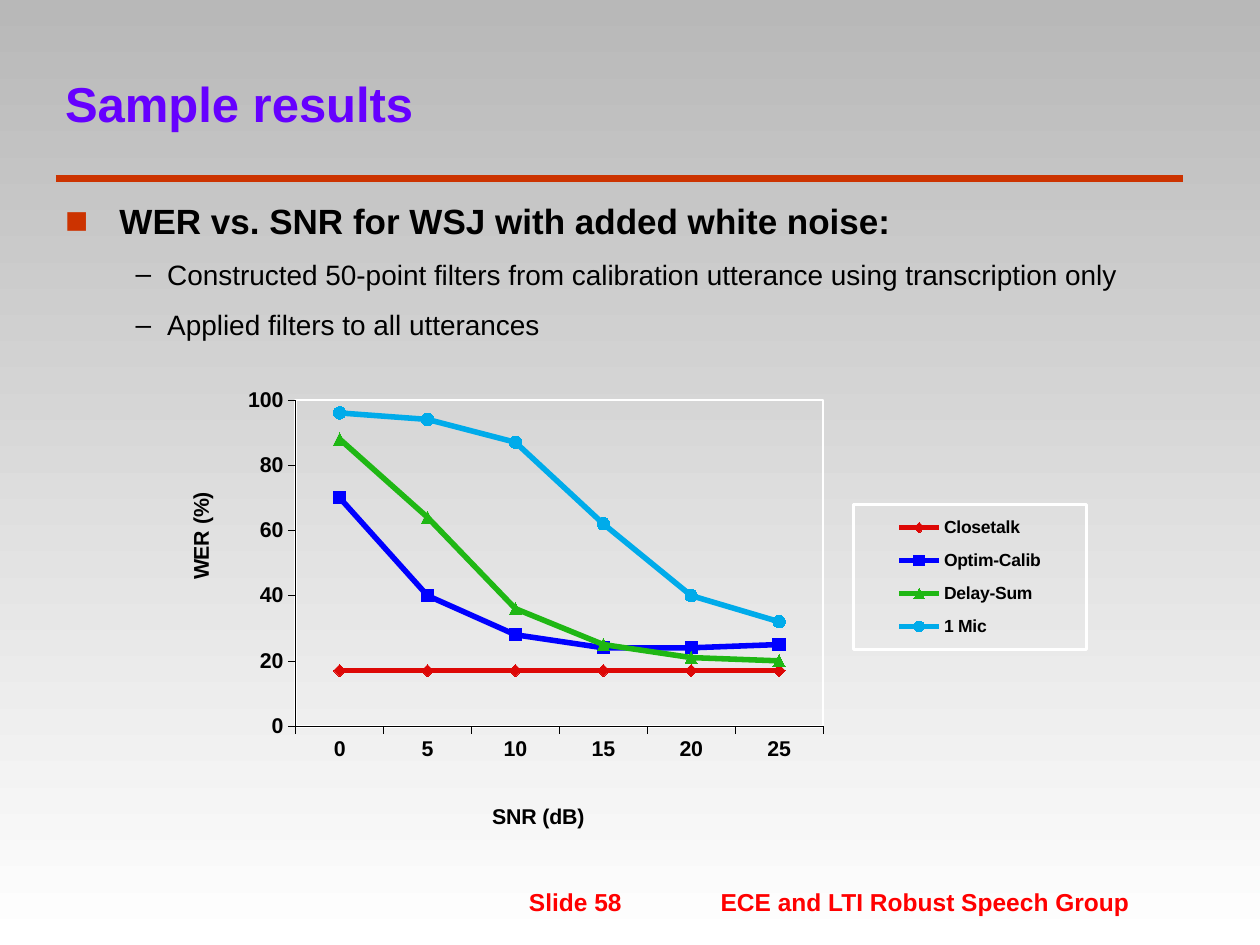
from lxml import etree
from pptx import Presentation
from pptx.chart.data import CategoryChartData
from pptx.dml.color import RGBColor
from pptx.enum.chart import XL_CHART_TYPE, XL_LEGEND_POSITION, XL_MARKER_STYLE, XL_TICK_MARK
from pptx.enum.shapes import MSO_CONNECTOR
from pptx.enum.text import MSO_ANCHOR
from pptx.oxml import parse_xml
from pptx.oxml.ns import nsdecls, qn
from pptx.util import Pt

LINE_MARKERS = XL_CHART_TYPE.LINE_MARKERS
RIGHT = XL_LEGEND_POSITION.RIGHT
OUTSIDE = XL_TICK_MARK.OUTSIDE
STRAIGHT = MSO_CONNECTOR.STRAIGHT
BOTTOM, MIDDLE = MSO_ANCHOR.BOTTOM, MSO_ANCHOR.MIDDLE

BLACK = RGBColor(0x00, 0x00, 0x00)
WHITE = RGBColor(0xFF, 0xFF, 0xFF)
GREY = RGBColor(0xB8, 0xB8, 0xB8)
RUST = RGBColor(0xCC, 0x33, 0x00)
PURPLE = RGBColor(0x66, 0x00, 0xFF)
RED = RGBColor(0xFF, 0x00, 0x00)

SNR_LEVELS = ["0", "5", "10", "15", "20", "25"]
SERIES = [  # name, WER values, colour, marker
    ("Closetalk", (17, 17, 17, 17, 17, 17), RGBColor(0xDD, 0x08, 0x06), XL_MARKER_STYLE.DIAMOND),
    ("Optim-Calib", (70, 40, 28, 24, 24, 25), RGBColor(0x00, 0x00, 0xFF), XL_MARKER_STYLE.SQUARE),
    ("Delay-Sum", (88, 64, 36, 25, 21, 20), RGBColor(0x1F, 0xB7, 0x14), XL_MARKER_STYLE.TRIANGLE),
    ("1 Mic", (96, 94, 87, 62, 40, 32), RGBColor(0x00, 0xAB, 0xEA), XL_MARKER_STYLE.CIRCLE),
]
HEADING = dict(size=20, bold=True, bullet="■", bullet_color=RUST, bullet_size=110,
               margin=31, hang=31, before=0)
DETAIL = dict(size=16, bold=False, bullet="–", bullet_color=BLACK, bullet_size=100,
              margin=58.3, hang=18, before=9.5)
BODY = [
    ("WER vs. SNR for WSJ with added white noise:", HEADING),
    ("Constructed 50-point filters from calibration utterance using transcription only", DETAIL),
    ("Applied filters to all utterances", DETAIL),
]


def set_font(font, size, color, bold=True):
    font.color.rgb = color
    for name, value in dict(name="Arial", size=Pt(size), bold=bold).items():
        setattr(font, name, value)


def set_frame(tf, anchor=None, inset=3.6):
    values = dict(word_wrap=True, vertical_anchor=anchor, margin_left=Pt(7.2),
                  margin_right=Pt(7.2), margin_top=Pt(inset), margin_bottom=Pt(inset))
    for name, value in values.items():
        setattr(tf, name, value)


def add_background(s):
    fill = s.background.fill
    fill.gradient()
    fill.gradient_angle = 270
    for stop, color in zip(fill.gradient_stops, (GREY, WHITE)):
        stop.color.rgb = color


def add_title(s, text):
    title = s.shapes.title
    title.left, title.top, title.width, title.height = Pt(30), Pt(27.4), Pt(648), Pt(48)
    set_frame(title.text_frame, BOTTOM, 0)
    p = title.text_frame.paragraphs[0]
    p.alignment = 1  # left
    r = p.add_run()
    r.text = text
    set_font(r.font, 28, PURPLE)


def add_rule(s):
    rule = s.shapes.add_connector(STRAIGHT, Pt(32), Pt(102.2), Pt(676), Pt(102.2))
    rule.line.color.rgb = RUST
    rule.line.width = Pt(4)
    etree.SubElement(rule.element.spPr, qn("a:effectLst"))


def add_bullet(p, style):
    pPr = p._p.get_or_add_pPr()
    pPr.set("marL", str(Pt(style["margin"])))
    pPr.set("indent", str(-Pt(style["hang"])))
    color = etree.SubElement(pPr, qn("a:buClr"))
    etree.SubElement(color, qn("a:srgbClr"), val=str(style["bullet_color"]))
    etree.SubElement(pPr, qn("a:buSzPct"), val=str(style["bullet_size"] * 1000))
    etree.SubElement(pPr, qn("a:buFont"), typeface="Arial")
    etree.SubElement(pPr, qn("a:buChar"), char=style["bullet"])


def add_body(s):
    tf = s.shapes.add_textbox(Pt(30.2), Pt(110.2), Pt(648), Pt(88)).text_frame
    set_frame(tf)
    for i, (text, style) in enumerate(BODY):
        p = tf.add_paragraph() if i else tf.paragraphs[0]
        add_bullet(p, style)
        p.space_before = Pt(style["before"])
        r = p.add_run()
        r.text = text
        set_font(r.font, style["size"], BLACK, style["bold"])


def add_footer(s):
    tf = s.shapes.add_textbox(Pt(102.2), Pt(497), Pt(582), Pt(36)).text_frame
    set_frame(tf, MIDDLE)
    p = tf.paragraphs[0]
    tabs = etree.SubElement(p._p.get_or_add_pPr(), qn("a:tabLst"))
    for stop in (193, 302.5):
        etree.SubElement(tabs, qn("a:tab"), pos=str(Pt(stop)), algn="l")
    r = p.add_run()
    r.text = "\tSlide 58\tECE and LTI Robust Speech Group"
    set_font(r.font, 14, RED)


def place(part, index, **fractions):
    """Fix a chart part at fractions of the chart area."""
    for old in part.findall(qn("c:layout")):
        part.remove(old)
    layout = etree.Element(qn("c:layout"))
    manual = etree.SubElement(layout, qn("c:manualLayout"))
    if part.tag == qn("c:plotArea"):
        etree.SubElement(manual, qn("c:layoutTarget"), val="inner")
    for key in ("x", "y"):
        etree.SubElement(manual, qn(f"c:{key}Mode"), val="edge")
    for key, value in fractions.items():
        etree.SubElement(manual, qn(f"c:{key}"), val=str(value))
    part.insert(index, layout)


def white_frame():
    return parse_xml(
        f'<c:spPr {nsdecls("c", "a")}><a:noFill/><a:ln w="{Pt(1.5)}"><a:solidFill>'
        f'<a:srgbClr val="{WHITE}"/></a:solidFill></a:ln></c:spPr>')


def format_axis(axis, title, x, y):
    values = dict(has_major_gridlines=False, major_tick_mark=OUTSIDE, has_title=True)
    for name, value in values.items():
        setattr(axis, name, value)
    axis.format.line.color.rgb = BLACK
    axis.format.line.width = Pt(0.27)
    set_font(axis.tick_labels.font, 12.2, BLACK)
    r = axis.axis_title.text_frame.paragraphs[0].add_run()
    r.text = title
    set_font(r.font, 12.2, BLACK)
    place(axis.axis_title.element, 1, x=x, y=y)


def format_series(series, color, marker):
    series.smooth = False
    series.format.line.color.rgb = color
    series.format.line.width = Pt(3.18)
    series.marker.style = marker
    series.marker.size = 7
    for part in (series.marker.format.fill, series.marker.format.line.fill):
        part.solid()
        part.fore_color.rgb = color


def add_wer_chart(s):
    data = CategoryChartData()
    data.categories = SNR_LEVELS
    for name, values, _, _ in SERIES:
        data.add_series(name, values)
    chart = s.shapes.add_chart(LINE_MARKERS, Pt(82), Pt(199.4), Pt(579.6), Pt(306.7), data).chart
    set_font(chart.font, 13.2, BLACK)
    chart.has_title = False
    chart.plots[0].vary_by_categories = False
    for series, (_, _, color, marker) in zip(chart.plots[0].series, SERIES):
        format_series(series, color, marker)

    # Axes
    format_axis(chart.category_axis, "SNR (dB)", 0.34, 0.84)
    format_axis(chart.value_axis, "WER (%)", 0.04, 0.26)
    for name, value in dict(minimum_scale=0, maximum_scale=100, major_unit=20).items():
        setattr(chart.value_axis, name, value)

    # Plot area and legend
    plot_area = chart.element.find(".//" + qn("c:plotArea"))
    place(plot_area, 0, x=0.15, y=0.095, w=0.52, h=0.608)
    plot_area.append(white_frame())
    chart.has_legend = True
    chart.legend.position = RIGHT
    chart.legend.include_in_layout = False
    set_font(chart.legend.font, 10, BLACK)
    legend = chart.element.find(".//" + qn("c:legend"))
    place(legend, 1, x=0.7, y=0.29, w=0.23, h=0.27)
    legend.find(qn("c:overlay")).addnext(white_frame())


def main():
    prs = Presentation()
    prs.slide_width, prs.slide_height = Pt(720), Pt(540)
    s = prs.slides.add_slide(prs.slide_layouts[5])
    add_background(s)
    add_rule(s)
    add_footer(s)
    add_title(s, "Sample results")
    add_body(s)
    add_wer_chart(s)
    prs.save("out.pptx")


if __name__ == "__main__":
    main()
